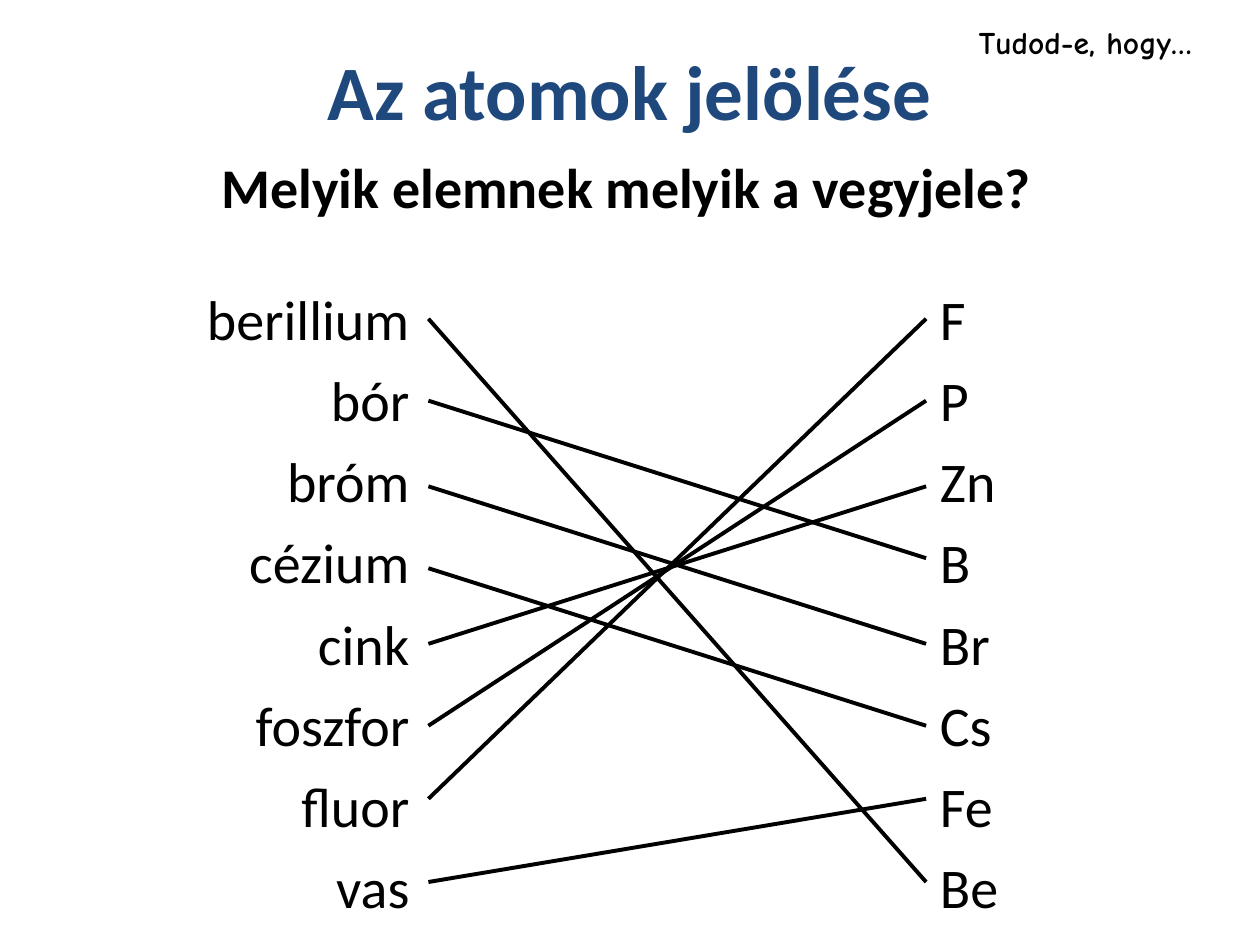
import dataclasses

import pptx
import pptx.dml.color
import pptx.enum.shapes
import pptx.enum.text
import pptx.oxml.ns
import pptx.util
from pptx.util import Inches

ALIGN = pptx.enum.text.PP_ALIGN
ANCHOR = pptx.enum.text.MSO_ANCHOR


@dataclasses.dataclass(frozen=True)
class Theme:
    ink: str = "000000"
    blue: str = "1F497D"
    body_font: str = "Calibri"
    note_font: str = "Comic Neue"
    title_size: int = 44
    body_size: int = 32
    note_size: int = 18
    line_width: float = 2.25


THEME = Theme()
TITLE = dict(name=THEME.body_font, size=pptx.util.Pt(THEME.title_size), bold=True)
QUESTION = dict(name=THEME.body_font, size=pptx.util.Pt(THEME.body_size), bold=True)
NOTE = dict(name=THEME.note_font, size=pptx.util.Pt(THEME.note_size), bold=True)
ENTRY = dict(name=THEME.body_font, size=pptx.util.Pt(THEME.body_size), bold=False)

ELEMENTS = ["berillium", "bór", "bróm", "cézium", "cink", "foszfor", "fluor", "vas"]
SYMBOLS = ["F", "P", "Zn", "B", "Br", "Cs", "Fe", "Be"]
ANSWERS = ["Be", "B", "Br", "Cs", "Zn", "P", "F", "Fe"]
ELEMENT_Y = [2.53, 3.18, 3.86, 4.51, 5.11, 5.76, 6.34, 7]
SYMBOL_Y = dict(zip(SYMBOLS, [2.53, 3.18, 3.86, 4.43, 5.11, 5.76, 6.34, 7]))


def rgb(color):
    return pptx.dml.color.RGBColor.from_string(color)


def write(tf, text, style, color=THEME.ink, align=ALIGN.LEFT):
    p = tf.paragraphs[0]
    p.alignment = align
    r = p.add_run()
    r.text = text
    for name, value in style.items():
        setattr(r.font, name, value)
    r.font.color.rgb = rgb(color)


def add_text(s, box, text, style, wrap=False, **look):
    tf = s.shapes.add_textbox(*map(Inches, box)).text_frame
    tf.word_wrap = wrap
    tf.vertical_anchor = ANCHOR.TOP
    write(tf, text, style, **look)


def add_heading(s):
    add_text(s, (0.5, 0.3, 9, 1.25), "Az atomok jelölése", TITLE,
             wrap=True, color=THEME.blue, align=ALIGN.CENTER)
    add_text(s, (1.63, 1.16, 6.69, 0.64), "Melyik elemnek melyik a vegyjele?",
             QUESTION, align=ALIGN.CENTER)
    add_text(s, (7.67, 0.13, 1.92, 0.4), "Tudod-e, hogy…", NOTE)


def add_pairs_table(s, box, widths):
    table = s.shapes.add_table(len(ELEMENTS), len(widths), *map(Inches, box)).table
    table.first_row = table.horz_banding = False
    for column, width in zip(table.columns, widths):
        column.width = Inches(width)
    for i, (element, symbol) in enumerate(zip(ELEMENTS, SYMBOLS)):
        write(table.cell(i, 0).text_frame, element, ENTRY, align=ALIGN.RIGHT)
        write(table.cell(i, 2).text_frame, symbol, ENTRY)
    for cell in table.iter_cells():
        cell.fill.background()
        cell.vertical_anchor = ANCHOR.MIDDLE


def add_answer_lines(s, left, right):
    """Join each element to its symbol across the gap from left to right."""
    for y, symbol in zip(ELEMENT_Y, ANSWERS):
        line = s.shapes.add_connector(
            pptx.enum.shapes.MSO_CONNECTOR.STRAIGHT,
            *map(Inches, (left, y, right, SYMBOL_Y[symbol])))
        line.line.color.rgb = rgb(THEME.ink)
        line.line.width = pptx.util.Pt(THEME.line_width)
        sp_pr = line._element.spPr
        sp_pr.append(sp_pr.makeelement(pptx.oxml.ns.qn("a:effectLst"), {}))


def main():
    prs = pptx.Presentation()
    prs.slide_width, prs.slide_height = Inches(10), Inches(7.5)
    s = prs.slides.add_slide(prs.slide_layouts[6])
    add_pairs_table(s, (1.43, 2.23, 7.26, 3.28), (1.92, 4.01, 1.33))
    add_heading(s)
    add_answer_lines(s, 3.4, 7.35)
    prs.save("out.pptx")


if __name__ == "__main__":
    main()
